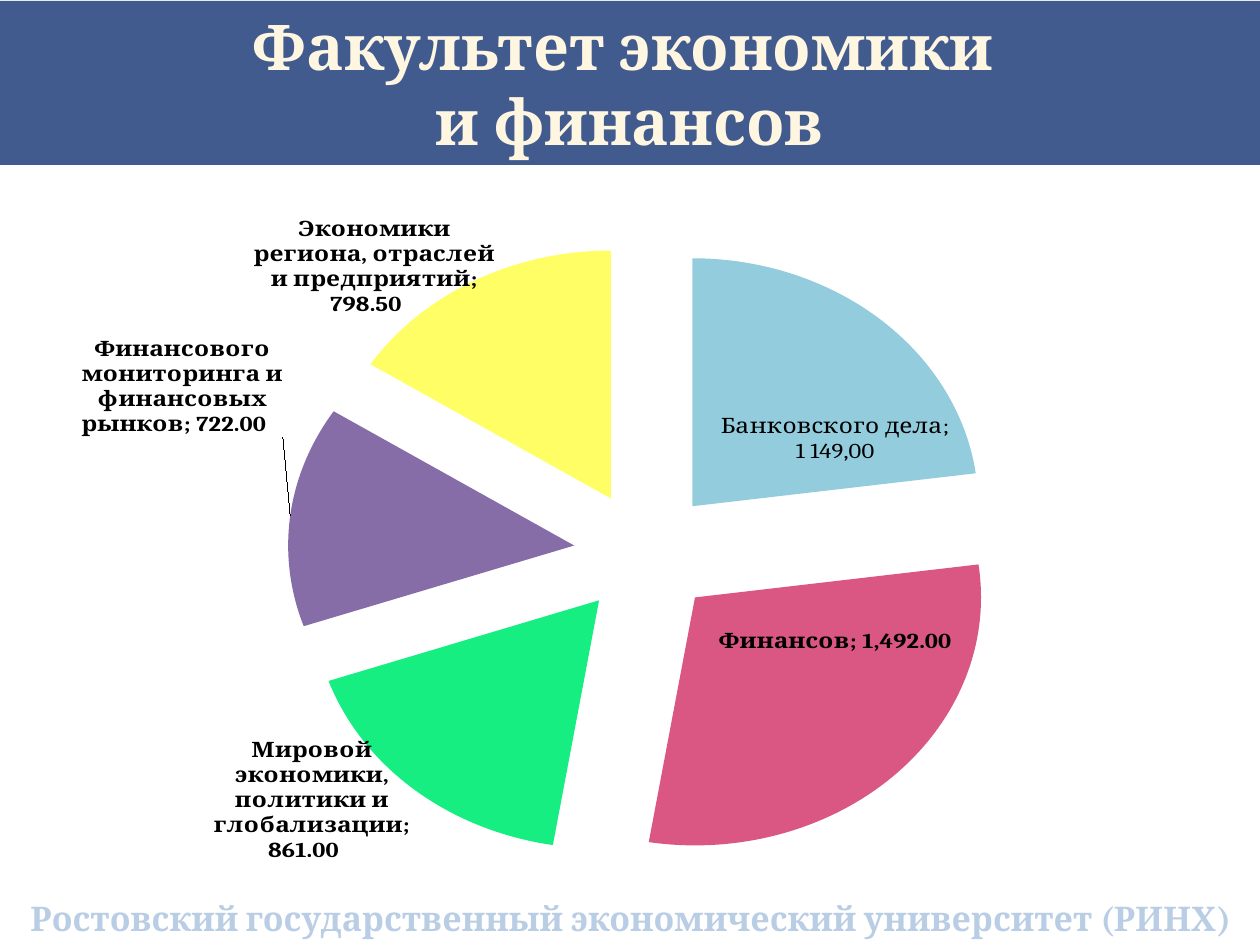
from copy import deepcopy

from lxml.etree import SubElement
from pptx import Presentation
from pptx.chart.data import CategoryChartData
from pptx.dml.color import RGBColor
from pptx.enum.chart import XL_CHART_TYPE as ChartType, XL_LABEL_POSITION as LabelPos
from pptx.enum.text import MSO_ANCHOR as Anchor, PP_ALIGN as Align
from pptx.oxml import parse_xml
from pptx.oxml.ns import nsdecls, qn
from pptx.util import Pt

PX = 914400 / 126
DEPARTMENTS = [
    ("Банковского дела", 1149, "93CDDD"),
    ("Финансов", 1492, "DB5783"),
    ("Мировой экономики, политики и глобализации", 861, "16EE82"),
    ("Финансового мониторинга и финансовых рынков", 722, "876DA7"),
    ("Экономики региона, отраслей и предприятий", 798.5, "FFFF65"),
]
LABEL_SHIFTS = {
    0: (LabelPos.CENTER, 0.04, 0.04),
    1: (LabelPos.CENTER, 0.04, -0.07),
    3: (LabelPos.OUTSIDE_END, 0, -0.12),
    4: (LabelPos.OUTSIDE_END, 0.02, 0),
}


def px(*lengths):
    return [round(length * PX) for length in lengths]


def color(value):
    return RGBColor.from_string(value)


def manual_layout(**settings):
    layout = parse_xml(f'<c:layout {nsdecls("c")}><c:manualLayout/></c:layout>')
    for tag, value in settings.items():
        SubElement(layout[0], qn(f"c:{tag}")).set("val", str(value))
    return layout


class FacultySlide:
    font = "Cambria"
    band = "415B8F"
    cream = "FFF6E1"
    pale = "B9CDE5"
    ink = "000000"

    def __init__(self, deck):
        self.slide = deck.slides.add_slide(deck.slide_layouts[5])

    def style(self, font, size, fill, bold=True):
        font.name = self.font
        font.size = Pt(size)
        font.bold = bold
        font.color.rgb = color(fill)

    def fill_text(self, frame, text, size, fill, spacing):
        frame.word_wrap = True
        frame.text = text
        for paragraph in frame.paragraphs:
            paragraph.alignment = Align.CENTER
            paragraph.line_spacing = spacing
            for run in paragraph.runs:
                self.style(run.font, size, fill)

    def title(self, text, box):
        heading = self.slide.shapes.title
        heading.left, heading.top, heading.width, heading.height = px(*box)
        heading.fill.solid()
        heading.fill.fore_color.rgb = color(self.band)
        heading.text_frame.vertical_anchor = Anchor.MIDDLE
        self.fill_text(heading.text_frame, text, 36, self.cream, 1.0)

    def footer(self, text, box):
        university = self.slide.shapes.add_textbox(*px(*box))
        self.fill_text(university.text_frame, text, 19.4, self.pale, 1.3)

    def pie(self, departments, box):
        data = CategoryChartData()
        data.categories = [name for name, _, _ in departments]
        data.add_series("Series 1", [hours for _, hours, _ in departments])
        chart = self.slide.shapes.add_chart(ChartType.PIE, *px(*box), data).chart
        chart.has_legend = False
        chart.has_title = False
        self.style(chart.font, 14, self.ink)
        self.place_plot(chart)
        series = chart.plots[0].series[0]
        series.format.line.fill.background()
        explosion = parse_xml(f'<c:explosion {nsdecls("c")} val="25"/>')
        series._element.find(qn("c:spPr")).addnext(explosion)
        for index, (_, _, fill) in enumerate(departments):
            sector = series.points[index].format
            sector.fill.solid()
            sector.fill.fore_color.rgb = color(fill)
            sector.line.fill.background()
        self.label_sectors(series)

    def place_plot(self, chart):
        area = chart._chartSpace.chart.plotArea
        for old in area.findall(qn("c:layout")):
            area.remove(old)
        area.insert(0, manual_layout(layoutTarget="inner", xMode="edge", yMode="edge",
                                     x=0.016, y=0.04, w=0.984, h=0.96))

    def label_sectors(self, series):
        labels = series.data_labels
        labels.show_category_name = True
        labels.show_value = True
        labels.show_percentage = False
        labels.number_format = "#,##0.00_р_."
        labels.number_format_is_linked = False
        labels.position = LabelPos.OUTSIDE_END
        self.style(labels.font, 14, self.ink)
        shared = labels._element
        for old in shared.findall(qn("c:showLeaderLines")):
            shared.remove(old)
        SubElement(shared, qn("c:separator")).text = "; "
        parts = [deepcopy(part) for part in shared]
        SubElement(shared, qn("c:showLeaderLines")).set("val", "1")

        for index, (position, x, y) in LABEL_SHIFTS.items():
            label = series.points[index].data_label
            label.position = position
            if index == 0:
                self.write_banking(label.text_frame)
            element = next(item for item in shared.findall(qn("c:dLbl"))
                           if item.find(qn("c:idx")).get("val") == str(index))
            if index:
                for part in list(element)[1:]:
                    element.remove(part)
                element.extend(deepcopy(parts))
                label.position = position
            element.find(qn("c:idx")).addnext(manual_layout(x=x, y=y))

    def write_banking(self, frame):
        frame.text = "Банковского дела;\n1 149,00"
        for paragraph in frame.paragraphs:
            for run in paragraph.runs:
                self.style(run.font, 14, self.ink, bold=False)


def main():
    deck = Presentation()
    deck.slide_width, deck.slide_height = px(1260, 945)
    page = FacultySlide(deck)
    page.title("Факультет экономики \vи финансов", (0, 1, 1260, 164))
    page.pie(DEPARTMENTS, (25, 175, 1221, 745))
    page.footer("Ростовский государственный экономический университет (РИНХ)",
                (1, 879, 1260, 66))
    deck.save("out.pptx")


if __name__ == "__main__":
    main()
